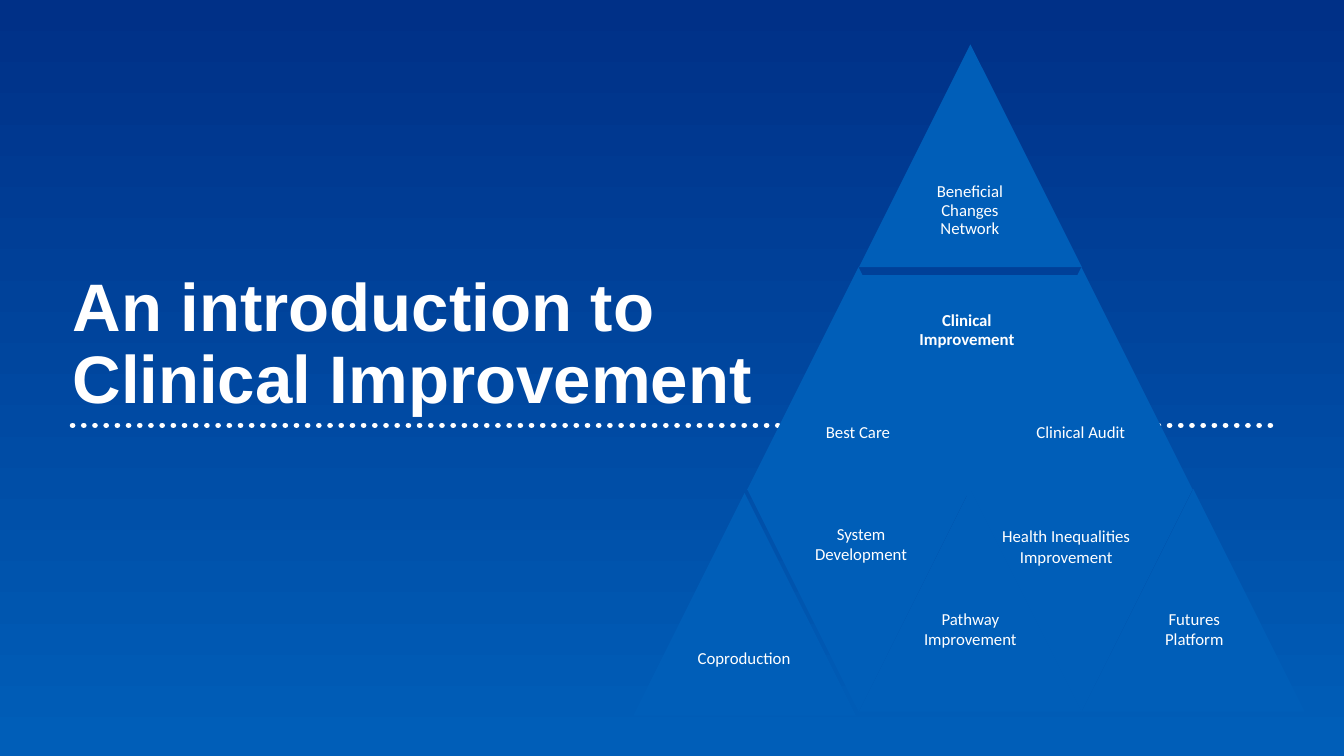
"""Build the title slide with the clinical improvement pyramid."""
from lxml import etree
from pptx import Presentation
from pptx import util as u
from pptx.dml.color import RGBColor
from pptx.enum import dml, shapes, text
from pptx.oxml.ns import qn

PX = 9144
THEME = {
    "navy": RGBColor.from_string("003087"),
    "blue": RGBColor.from_string("005EB8"),
    "white": RGBColor.from_string("FFFFFF"),
    "title_font": "Arial",
    "label_font": "Calibri",
    "title_size": u.Pt(48),
    "label_size": u.Pt(12),
}
SIDE = 221
HALF = SIDE // 2


def add_block(preset, x, y, w, h):
    sp = slide.shapes.add_shape(preset, *(v * PX for v in (x, y, w, h)))
    sp.shadow.inherit = False
    sp.line.fill.background()
    return sp


def add_text(x, y, w, h, paragraphs, inset, wrap=True, spacing=1.0,
             align=text.PP_ALIGN.CENTER, anchor=text.MSO_ANCHOR.MIDDLE,
             font="label", bold=False):
    tf = slide.shapes.add_textbox(*(v * PX for v in (x, y, w, h))).text_frame
    tf.word_wrap = wrap
    tf.vertical_anchor = anchor
    tf.margin_left = tf.margin_right = inset[0] * PX
    tf.margin_top = tf.margin_bottom = inset[1] * PX
    for i, lines in enumerate(paragraphs):
        p = tf.add_paragraph() if i else tf.paragraphs[0]
        p.alignment = align
        p.line_spacing = spacing
        for j, line in enumerate(lines):
            if j:
                p.add_line_break()
            r = p.add_run()
            r.text = line
            r.font.name = THEME[font + "_font"]
            r.font.size = THEME[font + "_size"]
            r.font.bold = bold
            r.font.color.rgb = THEME["white"]


prs = Presentation()
prs.slide_width, prs.slide_height = 1333 * PX, 750 * PX
slide = prs.slides.add_slide(prs.slide_layouts[6])

backdrop = add_block(shapes.MSO_SHAPE.RECTANGLE, 0, 0, 1333, 750)
backdrop.fill.gradient()
backdrop.fill.gradient_angle = 270
stops = backdrop.fill.gradient_stops
for stop, position, colour in zip(stops, (0, 0.99), ("navy", "blue")):
    stop.position = position
    stop.color.rgb = THEME[colour]

add_text(72, 271, 1032, 139, [["An introduction to", "Clinical Improvement"]],
         (0, 0), spacing=0.9, align=text.PP_ALIGN.LEFT,
         anchor=text.MSO_ANCHOR.TOP, font="title", bold=True)

rule = slide.shapes.add_connector(
    shapes.MSO_CONNECTOR.STRAIGHT, 72 * PX, 422 * PX, 1262 * PX, 422 * PX)
rule.line.color.rgb = THEME["white"]
rule.line.width = u.Pt(4)
rule.line.dash_style = dml.MSO_LINE.ROUND_DOT
rule_props = rule._element.spPr
rule_props.find(qn("a:ln")).set("cap", "rnd")
etree.SubElement(rule_props, qn("a:effectLst"))

TRIANGLES = [
    (852, 44, 0, "Beneficial Changes Network"),
    (741, 265, 0, "Best Care"),
    (849, 273, 180, "Clinical Improvement"),
    (962, 265, 0, "Clinical Audit"),
    (628, 489, 0, "Coproduction"),
    (741, 485, 180, None),
    (852, 485, 0, None),
    (962, 485, 180, None),
    (1073, 485, 0, None),
]
for x, y, rotation, label in TRIANGLES:
    triangle = add_block(shapes.MSO_SHAPE.ISOSCELES_TRIANGLE, x, y, SIDE, SIDE)
    triangle.rotation = rotation
    triangle.fill.solid()
    triangle.fill.fore_color.rgb = THEME["blue"]
    if label:
        label_y = y if rotation else y + HALF
        add_text(x + HALF // 2, label_y, HALF, HALF, [[label]], (5, 5),
                 spacing=0.9, bold=rotation == 180)

CAPTIONS = [
    (798, 515, 112, ("System", "Development")),
    (906, 599, 113, ("Pathway", "Improvement")),
    (983, 517, 149, ("Health Inequalities", "Improvement")),
    (1145, 599, 79, ("Futures", "Platform")),
]
for x, y, w, words in CAPTIONS:
    add_text(x, y, w, 50, [[word] for word in words], (10, 5), wrap=False,
             anchor=text.MSO_ANCHOR.TOP)

prs.save("out.pptx")
